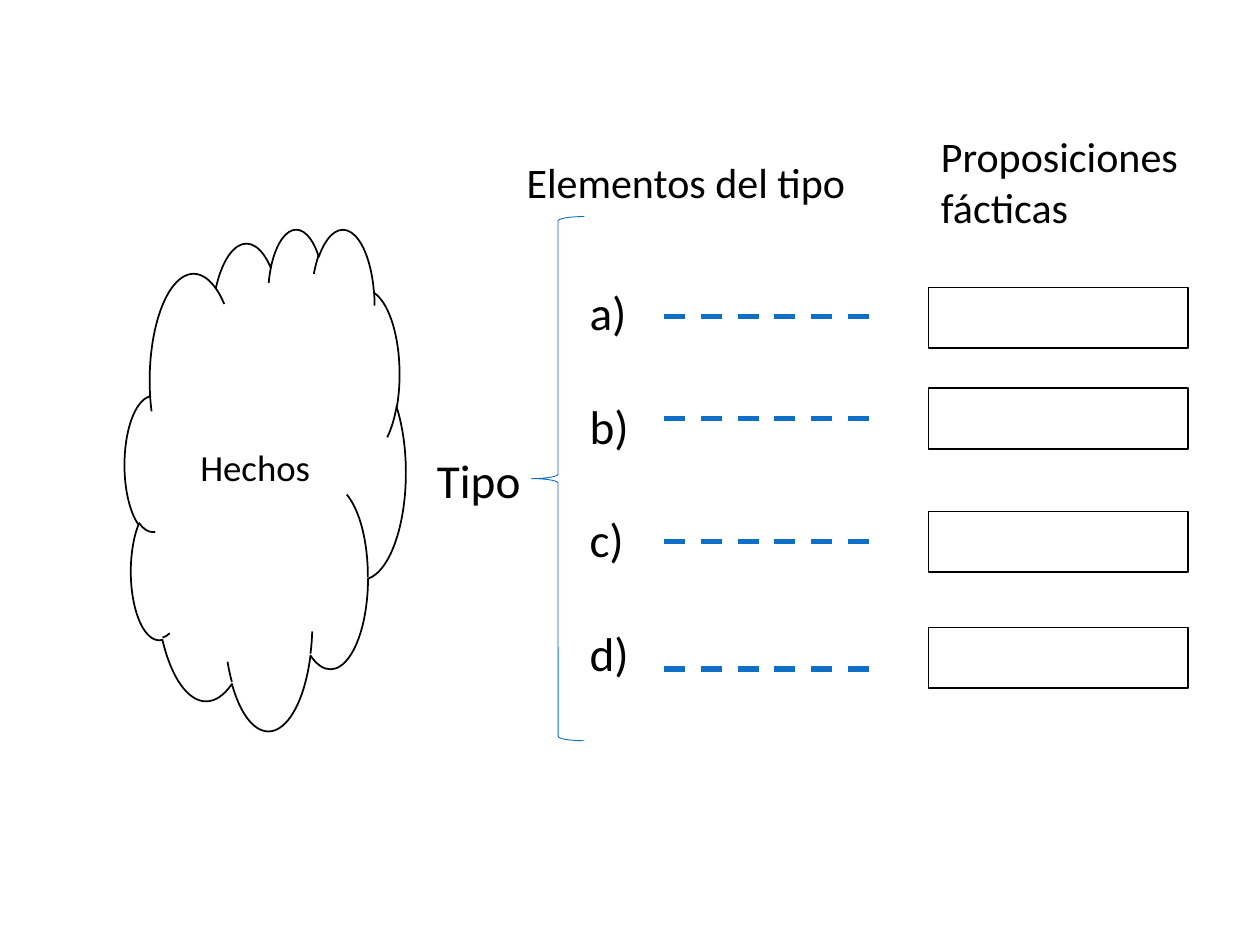
from pptx import Presentation
from pptx.dml.color import RGBColor
from pptx.enum import dml, shapes, text
from pptx.oxml import xmlchemy
from pptx.util import Pt

COLOURS = {"ink": "000000", "paper": "FFFFFF", "accent": "0F6FC6"}


def write(box, lines, size, frame_format, para_format):
    frame = box.text_frame
    for name, value in frame_format.items():
        setattr(frame, name, value)
    for index, line in enumerate(lines):
        para = frame.add_paragraph() if index else frame.paragraphs[0]
        for name, value in para_format.items():
            if index or name != "space_before":
                setattr(para, name, value)
        span = para.add_run()
        span.text = line
        for name, value in {"name": "Calibri", "size": Pt(size)}.items():
            setattr(span.font, name, value)
        span.font.color.rgb = RGBColor.from_string(COLOURS["ink"])


def outline(page, kind, place, colour, width, filled):
    shape = page.shapes.add_shape(kind, *map(Pt, place))
    shape.shadow.inherit = False
    if filled:
        shape.fill.solid()
        shape.fill.fore_color.rgb = RGBColor.from_string(COLOURS["paper"])
    else:
        shape.fill.background()
    shape.line.color.rgb = RGBColor.from_string(COLOURS[colour])
    shape.line.width = Pt(width)
    return shape


deck = Presentation()
deck.slide_width, deck.slide_height = Pt(720), Pt(540)
page = deck.slides.add_slide(deck.slide_layouts[6])

cloud = outline(page, shapes.MSO_SHAPE.CLOUD, (71.3, 130.3, 160.6, 286.6), "ink", 1, True)
write(cloud, ["Hechos"], 21,
      {"word_wrap": True, "vertical_anchor": text.MSO_ANCHOR.MIDDLE},
      {"alignment": text.PP_ALIGN.CENTER})
outline(page, shapes.MSO_SHAPE.LEFT_BRACE, (303.8, 123.8, 30.2, 299.5), "accent", 0.5, False)

labels = [
    (["Tipo"], 27, (242.6, 254.2, 76.3, 40.3)),
    (["a)", "b)", "c)", "d)"], 27, (329.8, 158.4, 76.3, 236.2)),
    (["Elementos del tipo"], 24, (293.8, 85.7, 206.6, 36)),
    (["Proposiciones fácticas"], 24, (530.6, 71.3, 195.1, 65.5)),
]
for lines, size, place in labels:
    box = page.shapes.add_textbox(*map(Pt, place))
    write(box, lines, size, {"word_wrap": True}, {"space_before": Pt(32.4)})

rows = [(164.2, 180.9), (221.8, 239), (292.3, 309.6), (358.6, 382.3)]
for top, dash_y in rows:
    outline(page, shapes.MSO_SHAPE.RECTANGLE, (530.6, top, 148.3, 34.6), "ink", 1, True)
    dash = page.shapes.add_connector(
        shapes.MSO_CONNECTOR.STRAIGHT, Pt(379.4), Pt(dash_y), Pt(500.4), Pt(dash_y))
    dash.line.color.rgb = RGBColor.from_string(COLOURS["accent"])
    for name, value in {"width": Pt(3), "dash_style": dml.MSO_LINE.DASH}.items():
        setattr(dash.line, name, value)
    dash._element.spPr.append(xmlchemy.OxmlElement("a:effectLst"))

deck.save("out.pptx")
